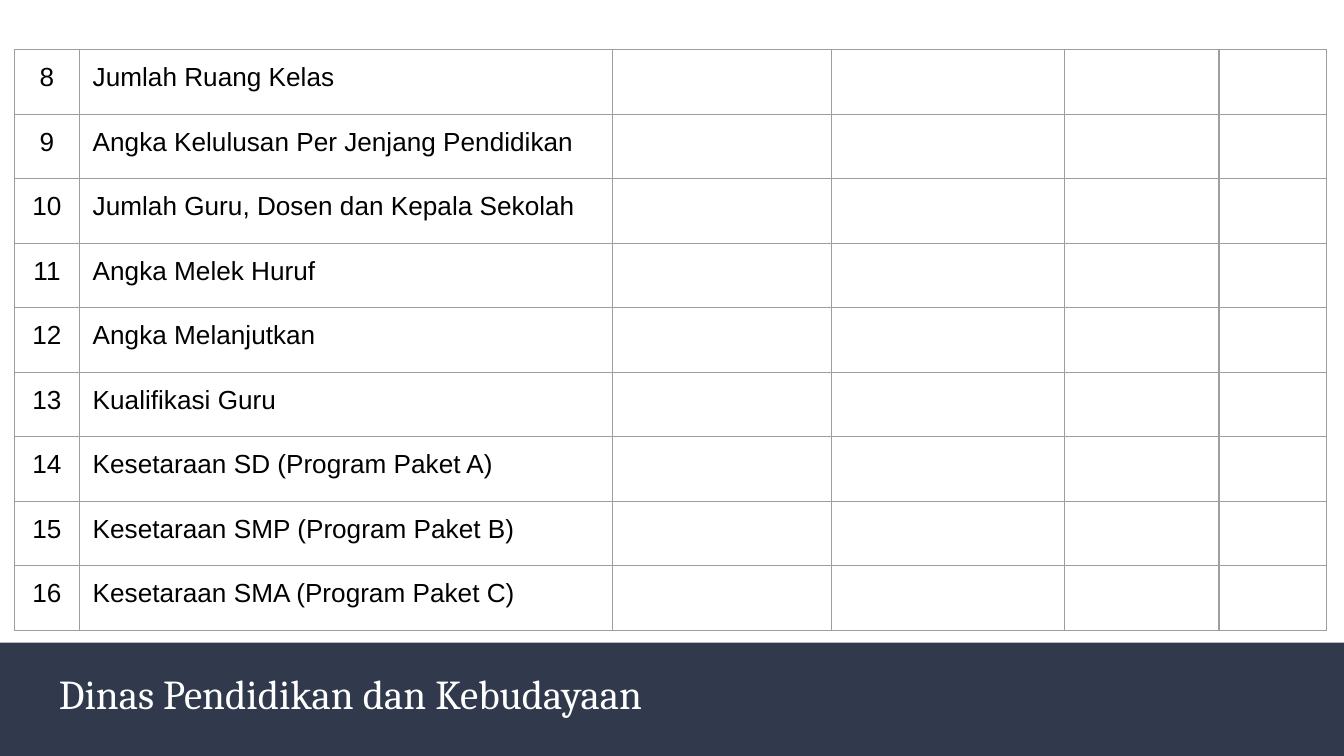
"""Builds the education office slide: a numbered indicator table over a title bar."""
from lxml import etree
from pptx import Presentation
from pptx import util as u
from pptx.dml.color import RGBColor
from pptx.enum import shapes, text
from pptx.oxml import ns

TITLE = "Dinas Pendidikan dan Kebudayaan"
FIRST = 8
ITEMS = [
    "Jumlah Ruang Kelas",
    "Angka Kelulusan Per Jenjang Pendidikan",
    "Jumlah Guru, Dosen dan Kepala Sekolah",
    "Angka Melek Huruf",
    "Angka Melanjutkan",
    "Kualifikasi Guru",
    "Kesetaraan SD (Program Paket A)",
    "Kesetaraan SMP (Program Paket B)",
    "Kesetaraan SMA (Program Paket C)",
]
COLS = [0.48, 3.97, 1.63, 1.73, 1.15, 0.8]
ROW = 0.48
LEFT, TOP = 0.11, 0.37
WIDE = 10
HIGH = WIDE * 9 / 16
SPLIT = 0.85

THEME = {
    "bar": "31394D",
    "line": "9E9E9E",
    "rule": 0.75,
    "title": {"name": "Cambria", "size": u.Pt(22), "color": "FFFFFF"},
    "body": {"name": "Arial", "size": u.Pt(14), "color": "000000"},
}
PAD = {f"margin_{side}": u.Inches(0.1) for side in ("left", "right", "top", "bottom")}
FLAGS = {"first_row": False, "horz_banding": False}


def apply(item, vals):
    for key, val in vals.items():
        setattr(item, key, val)


def write(frame, words, style, align):
    par = frame.paragraphs[0]
    par.alignment = align
    run = par.add_run()
    run.text = words
    apply(run.font, {"name": style["name"], "size": style["size"]})
    run.font.color.rgb = RGBColor.from_string(style["color"])
    return par


def border(cell):
    props = cell._tc.get_or_add_tcPr()
    for spot, side in enumerate("LRTB"):
        line = etree.Element(ns.qn(f"a:ln{side}"), w=str(u.Pt(THEME["rule"])))
        fill = etree.SubElement(line, ns.qn("a:solidFill"))
        etree.SubElement(fill, ns.qn("a:srgbClr"), val=THEME["line"])
        props.insert(spot, line)


def footer(slide):
    bar = slide.shapes.add_shape(
        shapes.MSO_SHAPE.RECTANGLE, 0, u.Inches(HIGH * SPLIT),
        u.Inches(WIDE), u.Inches(HIGH * (1 - SPLIT)))
    bar.shadow.inherit = False
    bar.fill.solid()
    bar.fill.fore_color.rgb = RGBColor.from_string(THEME["bar"])
    bar.line.fill.background()
    box = slide.shapes.add_textbox(*map(u.Inches, (0.34, 4.94, 8.73, 0.5)))
    frame = box.text_frame
    apply(frame, {**PAD, "word_wrap": True,
                  "vertical_anchor": text.MSO_ANCHOR.MIDDLE})
    par = write(frame, TITLE, THEME["title"], text.PP_ALIGN.LEFT)
    par.line_spacing = 0.8


def grid(slide):
    table = slide.shapes.add_table(
        len(ITEMS), len(COLS), u.Inches(LEFT), u.Inches(TOP),
        u.Inches(sum(COLS)), u.Inches(ROW * len(ITEMS))).table
    apply(table, FLAGS)
    for col, width in zip(table.columns, COLS):
        col.width = u.Inches(width)
    aligns = (text.PP_ALIGN.CENTER, text.PP_ALIGN.LEFT)
    for num, (row, item) in enumerate(zip(table.rows, ITEMS), FIRST):
        row.height = u.Inches(ROW)
        for cell in row.cells:
            cell.fill.background()
            border(cell)
        for cell, words, align in zip(row.cells, (str(num), item), aligns):
            apply(cell, PAD)
            write(cell.text_frame, words, THEME["body"], align)


def main():
    deck = Presentation()
    apply(deck, {"slide_width": u.Inches(WIDE), "slide_height": u.Inches(HIGH)})
    slide = deck.slides.add_slide(deck.slide_layouts[6])
    footer(slide)
    grid(slide)
    deck.save("out.pptx")


if __name__ == "__main__":
    main()
